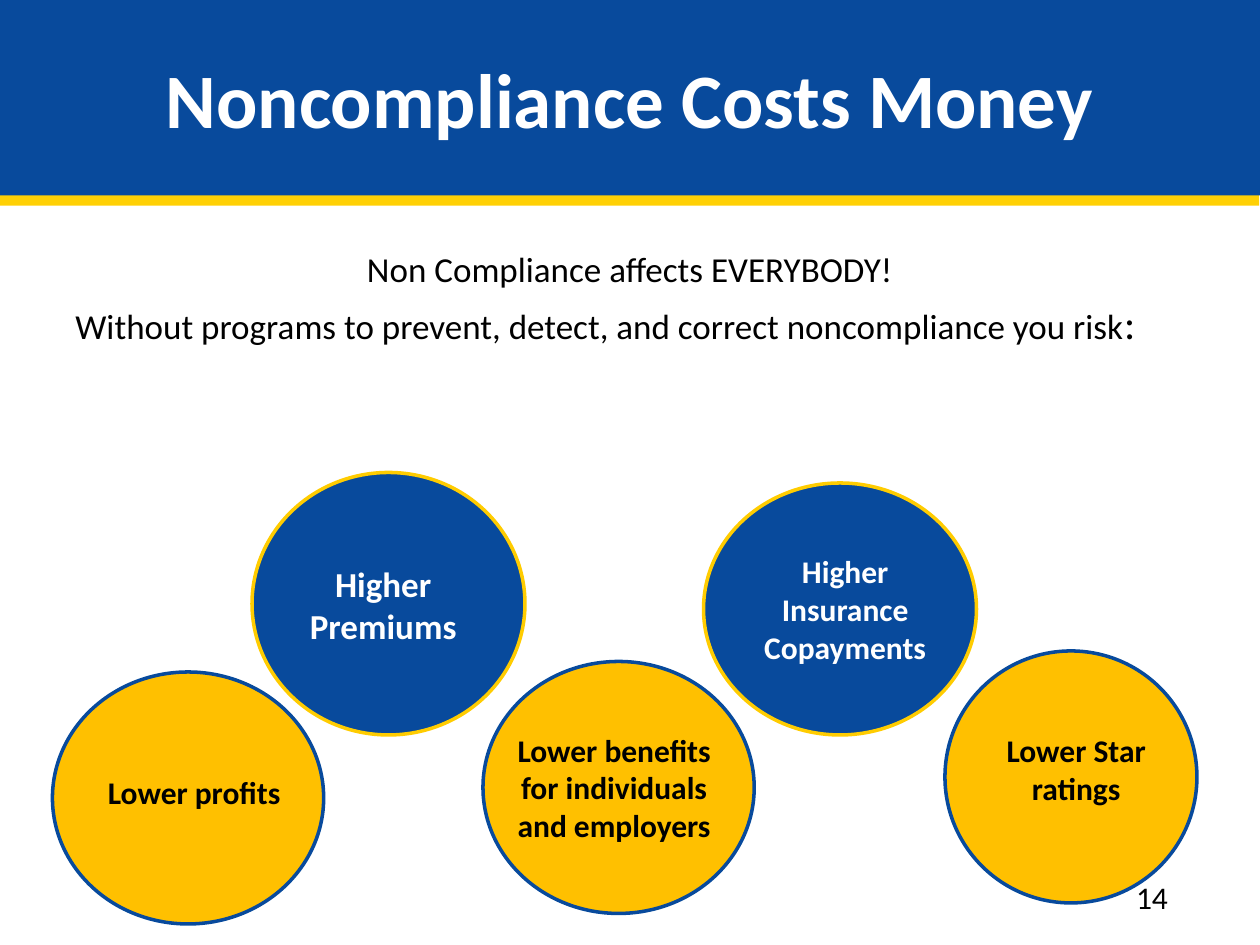
from lxml import etree
from pptx import Presentation
from pptx.dml.color import RGBColor
from pptx.enum.shapes import MSO_SHAPE
from pptx.enum.text import MSO_ANCHOR, PP_ALIGN
from pptx.oxml.ns import qn
from pptx.util import Pt

LEFT, CENTER, RIGHT = PP_ALIGN.LEFT, PP_ALIGN.CENTER, PP_ALIGN.RIGHT
MIDDLE = MSO_ANCHOR.MIDDLE
RECTANGLE, OVAL = MSO_SHAPE.RECTANGLE, MSO_SHAPE.OVAL

FONT = "Calibri"
COLORS = {"blue": "084A9C", "amber": "FFC000", "gold": "FFCC00",
          "stripe": "FFD004", "white": "FFFFFF", "black": "000000"}
STYLES = {"higher": ("blue", "gold", "white"),  # fill, outline, text
          "lower": ("amber", "blue", "black")}

TITLE = "Noncompliance Costs Money"
INTRO = [
    (CENTER, [("Non Compliance affects EVERYBODY!", 20)]),
    (LEFT, [("Without programs to prevent, detect, and correct noncompliance you risk", 20),
            (":", 24)]),
]
# text, size, style, circle box, label box (left, top, width, height)
RISKS = [
    ("Higher Premiums", 20, "higher", (144, 270, 156, 150), (150, 318, 138, 55.5)),
    ("Lower benefits for individuals and employers", 18, "lower",
     (276, 378, 155, 144), (282, 414, 138, 72.5)),
    ("Higher Insurance Copayments", 18, "higher", (402, 276, 156, 144), (426, 312, 114, 72)),
    ("Lower Star ratings", 18, "lower", (540, 372, 144, 144), (546, 414, 138, 51)),
    ("Lower profits", 18, "lower", (30, 384, 155, 144), (48, 438, 126, 29)),
]
PAGE = "14"


def rgb(name):
    return RGBColor.from_string(COLORS[name])


def add_shape(slide, kind, box, fill, outline=None):
    sp = slide.shapes.add_shape(kind, *map(Pt, box))
    sp.shadow.inherit = False
    sp.fill.solid()
    sp.fill.fore_color.rgb = rgb(fill)
    if outline:
        sp.line.color.rgb = rgb(outline)
        sp.line.width = Pt(2)
    else:
        sp.line.fill.background()
    return sp


def add_stripe_shadow(sp):
    """Cast a hard 6 pt shadow below the shape, as a stripe."""
    effects = sp._element.spPr.find(qn("a:effectLst"))
    shadow = etree.SubElement(effects, qn("a:outerShdw"), dist=str(Pt(6)),
                              dir="5640000", algn="ctr", rotWithShape="0")
    etree.SubElement(shadow, qn("a:srgbClr"), val=COLORS["stripe"])


def add_run(p, text, size, color, bold=False):
    r = p.add_run()
    r.text = text
    r.font.name = FONT
    r.font.size = Pt(size)
    r.font.bold = bold
    r.font.color.rgb = rgb(color)


def add_text_frame(slide, box):
    tf = slide.shapes.add_textbox(*map(Pt, box)).text_frame
    tf.word_wrap = True
    return tf


def add_label(slide, box, text, size, color, align=CENTER, bold=True):
    p = add_text_frame(slide, box).paragraphs[0]
    p.alignment = align
    add_run(p, text, size, color, bold)


prs = Presentation()
prs.slide_width, prs.slide_height = Pt(720), Pt(540)
slide = prs.slides.add_slide(prs.slide_layouts[6])

banner = add_shape(slide, RECTANGLE, (0, 0, 720, 111.6), "blue")
add_stripe_shadow(banner)
tf = banner.text_frame
tf.word_wrap = True
tf.vertical_anchor = MIDDLE
tf.paragraphs[0].alignment = CENTER
add_run(tf.paragraphs[0], TITLE, 44, "white", bold=True)

tf = add_text_frame(slide, (36, 138, 648, 344))
for i, (align, runs) in enumerate(INTRO):
    p = tf.add_paragraph() if i else tf.paragraphs[0]
    p.alignment = align
    p.space_before = Pt(4.5)
    for text, size in runs:
        add_run(p, text, size, "black")

for text, size, style, circle, label in RISKS:
    fill, outline, color = STYLES[style]
    add_shape(slide, OVAL, circle, fill, outline)
    add_label(slide, label, text, size, color)

add_label(slide, (624, 498, 50.5, 29), PAGE, 18, "black", RIGHT, bold=False)

prs.save("out.pptx")
